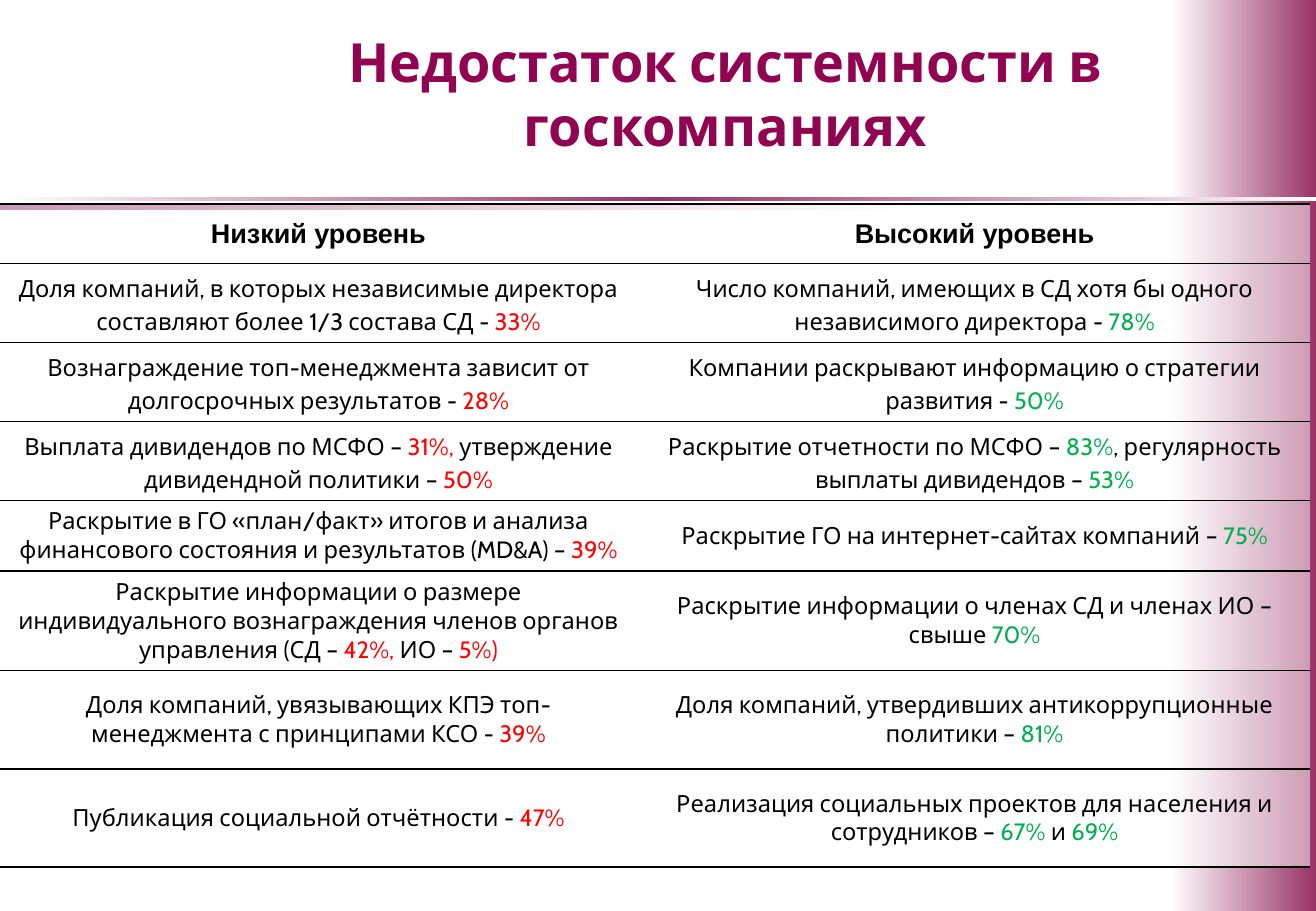
import pptx
import pptx.util
import pptx.dml.color
import pptx.enum.shapes
import pptx.enum.text
import pptx.oxml.ns
from lxml import etree

Pt = pptx.util.Pt
qn = pptx.oxml.ns.qn
RGB = pptx.dml.color.RGBColor.from_string

COLORS = {"white": "FFFFFF", "plum": "993366", "title": "900451",
          "black": "000000", "red": "FF0000", "green": "00B050"}
TITLE = "Недостаток системности в госкомпаниях"
HEADS = ("Низкий уровень", "Высокий уровень")
ROWS = [
    ("Доля компаний, в которых независимые директора составляют более 1/3 состава СД - |33%",
     "Число компаний, имеющих в СД хотя бы одного независимого директора - |78%"),
    ("Вознаграждение топ-менеджмента зависит от долгосрочных результатов - |28%",
     "Компании раскрывают информацию о стратегии развития - |50%"),
    ("Выплата дивидендов по МСФО – |31%, |утверждение дивидендной политики –| 50%",
     "Раскрытие отчетности по МСФО – |83%|, регулярность выплаты дивидендов – |53%"),
    ("Раскрытие в ГО «план/факт» итогов и анализа финансового состояния и результатов (MD&A) – |39%",
     "Раскрытие ГО на интернет-сайтах компаний – |75%"),
    ("Раскрытие информации о размере индивидуального вознаграждения членов органов управления "
     "(СД – |42%, |ИО – |5%)",
     "Раскрытие информации о членах СД и членах ИО – свыше |70%"),
    ("Доля компаний, увязывающих КПЭ топ-менеджмента с принципами КСО - |39%",
     "Доля компаний, утвердивших антикоррупционные политики – |81%"),
    ("Публикация социальной отчётности - |47%",
     "Реализация социальных проектов для населения и сотрудников – |67% |и| 69%"),
]
WIDTHS = (380.2, 397.4)
HEIGHTS = (35.3, 46.8, 46.8, 46.8, 41.8, 59, 58.3, 58.3)
LOOSE = 3
BARS = [
    ((693.4, 0, 86.4, 540), ("white", "plum")),
    ((0, 116.6, 779.8, 2.9), ("white", "plum", "white")),
    ((0, 121.7, 545.8, 2.9), ("plum", "white")),
]


def write(frame, text, size=14, font="Cabin", bold=False, color="black",
          accent="black", spacing=1.0):
    frame.word_wrap = True
    frame.vertical_anchor = pptx.enum.text.MSO_ANCHOR.MIDDLE
    para = frame.paragraphs[0]
    para.alignment = pptx.enum.text.PP_ALIGN.CENTER
    para.line_spacing = spacing
    para.space_before = Pt(0)
    for i, part in enumerate(text.split("|")):
        run = para.add_run()
        run.text = part
        run.font.size = Pt(size)
        run.font.name = font
        run.font.bold = bold
        run.font.color.rgb = RGB(COLORS[accent if i % 2 else color])


def add_bar(slide, box, names):
    bar = slide.shapes.add_shape(pptx.enum.shapes.MSO_SHAPE.RECTANGLE, *map(Pt, box))
    bar.shadow.inherit = False
    bar.line.fill.background()
    bar.fill.gradient()
    bar.fill.gradient_angle = 0
    stops = bar._element.spPr.find(".//" + qn("a:gsLst"))
    for stop in list(stops):
        stops.remove(stop)
    for i, name in enumerate(names):
        place = str(i * 100000 // (len(names) - 1))
        stop = etree.SubElement(stops, qn("a:gs"), pos=place)
        etree.SubElement(stop, qn("a:srgbClr"), val=COLORS[name])


def style(cell):
    cell.fill.solid()
    cell.fill.fore_color.rgb = RGB(COLORS["white"])
    props = cell._tc.get_or_add_tcPr()
    tint = props.find(".//" + qn("a:srgbClr"))
    etree.SubElement(tint, qn("a:alpha"), val="50000")
    for i, side in enumerate(("lnL", "lnR", "lnT", "lnB")):
        edge = etree.Element(qn("a:" + side), w=str(Pt(1)))
        if side in ("lnT", "lnB"):
            fill = etree.SubElement(edge, qn("a:solidFill"))
            etree.SubElement(fill, qn("a:srgbClr"), val=COLORS["black"])
        else:
            etree.SubElement(edge, qn("a:noFill"))
        props.insert(i, edge)
    cell.margin_left = cell.margin_right = Pt(7.6)
    cell.margin_top = cell.margin_bottom = Pt(3.6)
    cell.vertical_anchor = pptx.enum.text.MSO_ANCHOR.MIDDLE


def add_grid(slide):
    shape = slide.shapes.add_table(len(HEIGHTS), len(WIDTHS), Pt(-1.4), Pt(121),
                                   Pt(sum(WIDTHS)), Pt(sum(HEIGHTS)))
    table = shape.table
    table.first_row = table.horz_banding = False
    for col, width in zip(table.columns, WIDTHS):
        col.width = Pt(width)
    for row, height in zip(table.rows, HEIGHTS):
        row.height = Pt(height)
    for r, texts in enumerate([HEADS] + ROWS):
        for c, text in enumerate(texts):
            cell = table.cell(r, c)
            if r == 0:
                write(cell.text_frame, text, size=16, font="Arial", bold=True)
            else:
                write(cell.text_frame, text, accent=("red", "green")[c],
                      spacing=1.15 if r <= LOOSE else 1.0)
            style(cell)


def main():
    deck = pptx.Presentation()
    deck.slide_width, deck.slide_height = Pt(779.8), Pt(540)
    slide = deck.slides.add_slide(deck.slide_layouts[5])
    for box, names in BARS:
        add_bar(slide, box, names)
    title = slide.shapes.title
    title.left, title.top, title.width, title.height = map(Pt, (96.5, 0, 666.7, 110.2))
    title.text_frame.auto_size = pptx.enum.text.MSO_AUTO_SIZE.NONE
    write(title.text_frame, TITLE, size=32, bold=True, color="title")
    slide.shapes._spTree.append(title._element)
    add_grid(slide)
    deck.save("out.pptx")


if __name__ == "__main__":
    main()
